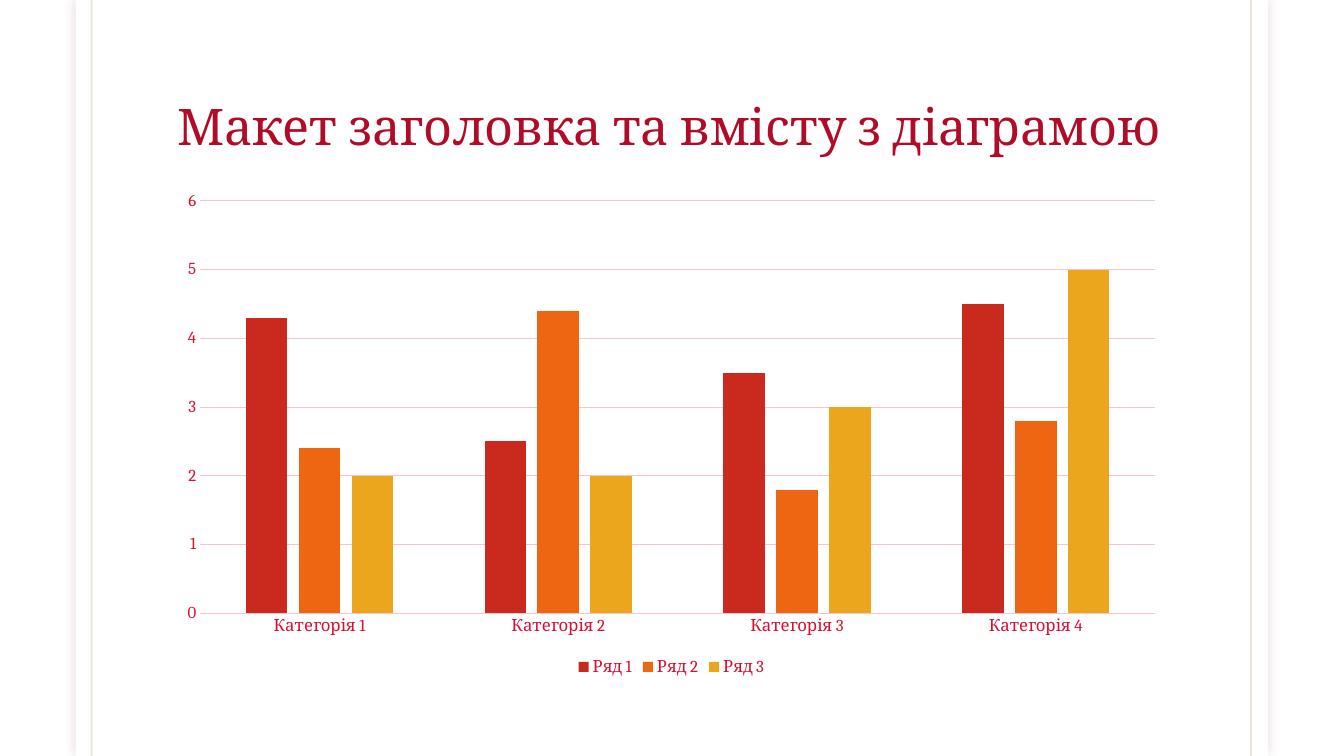
from dataclasses import dataclass

from lxml.etree import SubElement
from pptx import Presentation
from pptx.chart.data import CategoryChartData as ChartData
from pptx.dml.color import RGBColor
from pptx.enum.chart import XL_CHART_TYPE as Kind
from pptx.enum.chart import XL_LEGEND_POSITION as Place
from pptx.enum.chart import XL_TICK_MARK as Tick
from pptx.enum.shapes import MSO_CONNECTOR as Link
from pptx.enum.shapes import MSO_SHAPE as Shape
from pptx.enum.text import MSO_ANCHOR as Anchor
from pptx.enum.text import MSO_AUTO_SIZE as Fit
from pptx.enum.text import PP_ALIGN as Align
from pptx.oxml.ns import qn
from pptx.util import Pt

WHITE = RGBColor(0xFF, 0xFF, 0xFF)
SHADE = RGBColor(0x65, 0x15, 0x0F)
RULE = RGBColor(0x79, 0x54, 0x0B)
TITLE = RGBColor(0xB1, 0x0C, 0x27)
BASE = RGBColor(0x4D, 0x05, 0x11)
LABEL = RGBColor(0xDA, 0x0E, 0x30)
GRID = RGBColor(0xFB, 0xC3, 0xCC)
RED = RGBColor(0xCA, 0x2A, 0x1E)
ORANGE = RGBColor(0xEE, 0x66, 0x12)
GOLD = RGBColor(0xEB, 0xA6, 0x1D)
FONT = "Cambria"
WIDE, HIGH = 960, 540
LEFT, SPAN = 119.5, 720


@dataclass
class Series:
    name: str
    vals: tuple[float, ...]
    color: RGBColor


CATS = ("Категорія 1", "Категорія 2", "Категорія 3", "Категорія 4")
SERIES = (
    Series("Ряд 1", (4.3, 2.5, 3.5, 4.5), RED),
    Series("Ряд 2", (2.4, 4.4, 1.8, 2.8), ORANGE),
    Series("Ряд 3", (2, 2, 3, 5), GOLD),
)


def set_font(font, size: float, color: RGBColor) -> None:
    font.name = FONT
    font.size = Pt(size)
    font.bold = False
    font.color.rgb = color


def set_line(line, color: RGBColor, width: float) -> None:
    line.color.rgb = color
    line.width = Pt(width)


def add_panel(slide) -> None:
    panel = slide.shapes.add_shape(Shape.RECTANGLE, Pt(54), 0, Pt(852), Pt(HIGH))
    panel.fill.solid()
    panel.fill.fore_color.rgb = WHITE
    panel.line.fill.background()
    panel.shadow.inherit = False
    effects = panel._element.spPr.find(qn("a:effectLst"))
    glow = SubElement(effects, qn("a:outerShdw"), blurRad=str(Pt(7)), dist="0",
                      dir="0", algn="ctr", rotWithShape="0")
    color = SubElement(glow, qn("a:srgbClr"), val=str(SHADE))
    SubElement(color, qn("a:alpha"), val="15000")
    # The panel lies behind the title
    slide.shapes._spTree.insert(2, panel._element)


def add_rule(slide, left: float) -> None:
    rule = slide.shapes.add_connector(Link.STRAIGHT, Pt(left), 0, Pt(left), Pt(HIGH))
    set_line(rule.line, RULE, 1.5)
    props = rule._element.spPr
    SubElement(next(props.iter(qn("a:srgbClr"))), qn("a:alpha"), val="15000")
    SubElement(props, qn("a:effectLst"))


def set_title(slide, text: str) -> None:
    title = slide.shapes.title
    title.left, title.top = Pt(LEFT), Pt(25.2)
    title.width, title.height = Pt(SPAN), Pt(90)
    frame = title.text_frame
    frame.text = text
    frame.word_wrap = True
    frame.auto_size = Fit.NONE
    frame.vertical_anchor = Anchor.BOTTOM
    par = frame.paragraphs[0]
    par.alignment = Align.LEFT
    par.line_spacing = 0.85
    set_font(par.runs[0].font, 36, TITLE)


def add_chart(slide) -> None:
    data = ChartData()
    data.categories = CATS
    for row in SERIES:
        data.add_series(row.name, row.vals)
    chart = slide.shapes.add_chart(Kind.COLUMN_CLUSTERED, Pt(LEFT), Pt(129.6),
                                   Pt(SPAN), Pt(356.4), data).chart
    chart.has_title = False
    set_font(chart.font, 10, BASE)

    # Columns
    plot = chart.plots[0]
    plot.gap_width = 219
    plot.overlap = -27
    plot.vary_by_categories = False
    for bar, row in zip(plot.series, SERIES):
        bar.format.fill.solid()
        bar.format.fill.fore_color.rgb = row.color

    # Axes and grid
    for axis in (chart.category_axis, chart.value_axis):
        axis.major_tick_mark = axis.minor_tick_mark = Tick.NONE
        set_font(axis.tick_labels.font, 12, LABEL)
    set_line(chart.category_axis.format.line, GRID, 0.75)
    scale = chart.value_axis
    scale.minimum_scale, scale.maximum_scale, scale.major_unit = 0, 6, 1
    scale.format.line.fill.background()
    scale.has_major_gridlines = True
    set_line(scale.major_gridlines.format.line, GRID, 0.75)

    # Legend
    chart.has_legend = True
    chart.legend.position = Place.BOTTOM
    chart.legend.include_in_layout = False
    set_font(chart.legend.font, 12, LABEL)


def main() -> None:
    deck = Presentation()
    deck.slide_width, deck.slide_height = Pt(WIDE), Pt(HIGH)
    slide = deck.slides.add_slide(deck.slide_layouts[5])
    slide.background.fill.solid()
    slide.background.fill.fore_color.rgb = WHITE
    add_panel(slide)
    for left in (65.5, 893.5):
        add_rule(slide, left)
    set_title(slide, "Макет заголовка та вмісту з діаграмою")
    add_chart(slide)
    deck.save("out.pptx")


if __name__ == "__main__":
    main()
